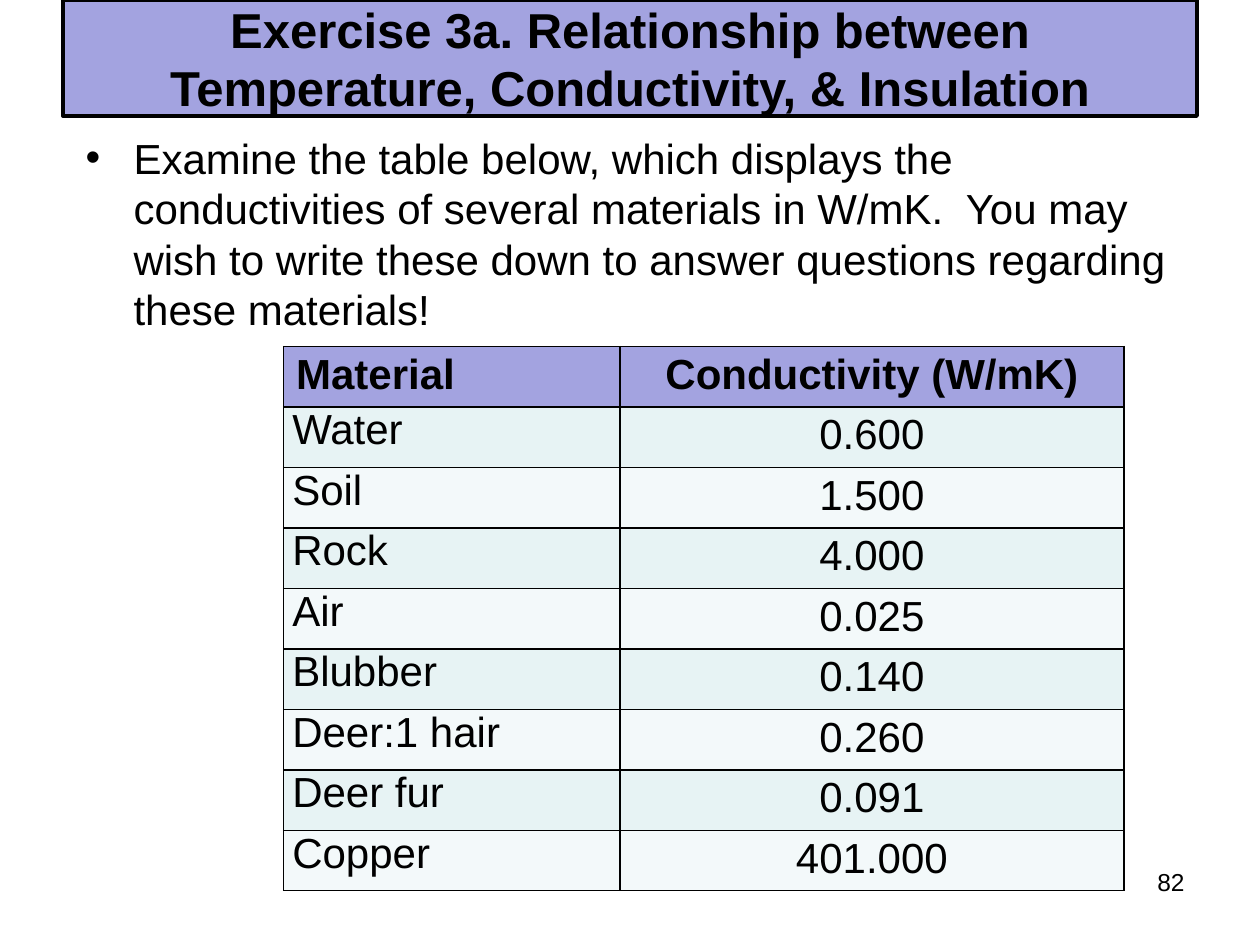
from lxml.etree import SubElement
from pptx import Presentation
from pptx.dml.color import RGBColor
from pptx.enum.text import MSO_ANCHOR, MSO_AUTO_SIZE, PP_ALIGN
from pptx.oxml.ns import qn
from pptx.util import Inches, Pt

BLACK = RGBColor(0x00, 0x00, 0x00)
LAVENDER = RGBColor(0xA3, 0xA3, 0xE0)
MIST = RGBColor(0xE7, 0xF3, 0xF4)
PALE = RGBColor(0xF3, 0xF9, 0xFA)

TITLE = "Exercise 3a. Relationship between Temperature, Conductivity, & Insulation"
BODY = ("Examine the table below, which displays the conductivities of several "
        "materials in W/mK.  You may wish to write these down to answer "
        "questions regarding these materials!")
ROWS = [
    ("Material", "Conductivity (W/mK)"),
    ("Water", "0.600"),
    ("Soil", "1.500"),
    ("Rock", "4.000"),
    ("Air", "0.025"),
    ("Blubber", "0.140"),
    ("Deer:1 hair", "0.260"),
    ("Deer fur", "0.091"),
    ("Copper", "401.000"),
]


def set_attrs(obj, values):
    """Set each named attribute of obj."""
    for name, value in values.items():
        setattr(obj, name, value)


def place(sp, left, top, width, height):
    """Position and size a shape in inches."""
    set_attrs(sp, {"left": Inches(left), "top": Inches(top),
                   "width": Inches(width), "height": Inches(height)})


def write(tf, text, size, align=PP_ALIGN.LEFT, bold=False):
    """Write one formatted paragraph and return it."""
    p = tf.paragraphs[0]
    p.alignment = align
    r = p.add_run()
    r.text = text
    set_attrs(r.font, {"name": "Arial", "size": Pt(size), "bold": bold})
    r.font.color.rgb = BLACK
    return p


def add_title(s):
    """Fill the title placeholder as a bordered banner."""
    sp = s.shapes.title
    place(sp, 0.5, 0, 9, 0.92)
    sp.fill.solid()
    sp.fill.fore_color.rgb = LAVENDER
    sp.line.color.rgb = BLACK
    sp.line.width = Pt(2.25)
    set_attrs(sp.text_frame, {"auto_size": MSO_AUTO_SIZE.NONE, "word_wrap": True,
                              "vertical_anchor": MSO_ANCHOR.MIDDLE})
    write(sp.text_frame, TITLE, 28, PP_ALIGN.CENTER, True)


def add_body(s):
    """Fill the body placeholder with the bulleted instruction."""
    sp = s.placeholders[1]
    place(sp, 0.58, 1, 9, 1.7)
    set_attrs(sp.text_frame, {"auto_size": MSO_AUTO_SIZE.NONE, "word_wrap": True})
    p = write(sp.text_frame, BODY, 24)
    p.space_before = Pt(4.8)
    pPr = p._p.get_or_add_pPr()
    pPr.set("marL", str(Inches(0.38)))
    pPr.set("indent", str(Inches(-0.38)))
    SubElement(pPr, qn("a:buChar"), char="•")


def add_borders(cell):
    """Draw a thin black line on all four sides of a cell."""
    tcPr = cell._tc.get_or_add_tcPr()
    for i, side in enumerate(("lnL", "lnR", "lnT", "lnB")):
        ln = tcPr.makeelement(qn(f"a:{side}"), {"w": str(Pt(1))})
        fill = SubElement(ln, qn("a:solidFill"))
        SubElement(fill, qn("a:srgbClr"), val=str(BLACK))
        tcPr.insert(i, ln)


def add_cell(cell, text, row, col):
    """Format one table cell according to its row and column."""
    header, label = row == 0, col == 0
    cell.fill.solid()
    cell.fill.fore_color.rgb = LAVENDER if header else MIST if row % 2 else PALE
    add_borders(cell)
    if label and not header:
        margins = {"margin_left": Inches(0.07), "margin_right": Inches(0.07),
                   "margin_top": 0, "margin_bottom": 0}
    else:
        margins = {"margin_top": Inches(0.04), "margin_bottom": Inches(0.04)}
    set_attrs(cell, margins)
    write(cell.text_frame, text, 24,
          PP_ALIGN.LEFT if label else PP_ALIGN.CENTER, header)


def add_conductivity_table(s):
    """Add the table of materials and conductivities."""
    table = s.shapes.add_table(len(ROWS), 2, Inches(2.25), Inches(2.75),
                               Inches(6.67), Inches(4.25)).table
    for col, width in zip(table.columns, (2.67, 4)):
        col.width = Inches(width)
    for i, values in enumerate(ROWS):
        for j, text in enumerate(values):
            add_cell(table.cell(i, j), text, i, j)


def add_page_number(s):
    """Add the page number at the lower right."""
    sp = s.shapes.add_textbox(Inches(7.17), Inches(6.83), Inches(2.33), Inches(0.52))
    sp.text_frame.word_wrap = True
    write(sp.text_frame, "82", 14, PP_ALIGN.RIGHT)


def main():
    """Build and save the slide."""
    prs = Presentation()
    prs.slide_width, prs.slide_height = Inches(10), Inches(7.5)
    s = prs.slides.add_slide(prs.slide_layouts[1])
    add_title(s)
    add_body(s)
    add_page_number(s)
    add_conductivity_table(s)
    prs.save("out.pptx")


if __name__ == "__main__":
    main()
